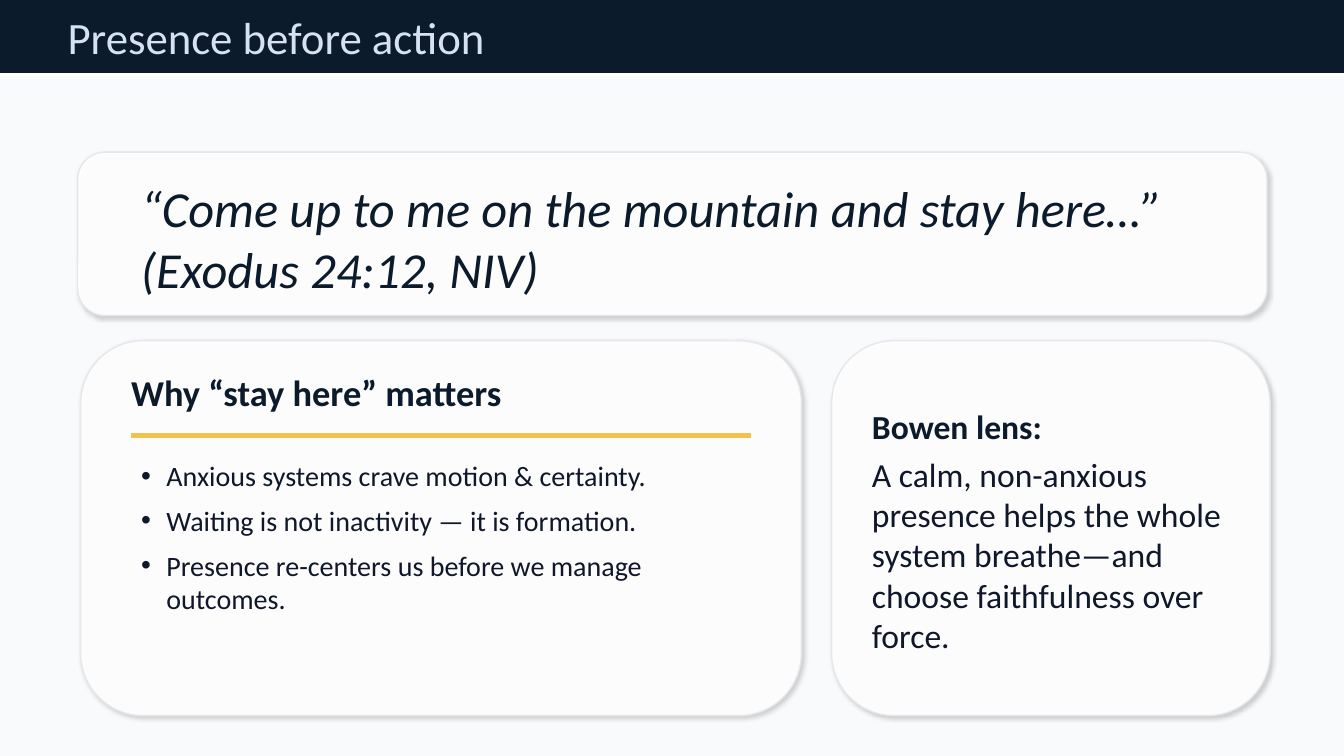
from collections import namedtuple

import lxml.etree
import pptx
import pptx.dml.color
import pptx.enum.shapes
import pptx.enum.text
import pptx.oxml.ns
import pptx.util

CELL = pptx.util.Inches(0.1)
COLUMNS, ROWS = 133.33, 75
COLORS = {
    "navy": "0B1B2B",
    "sky": "D7E2F0",
    "paper": "F8FAFC",
    "card": "FFFFFF",
    "edge": "E5E7EB",
    "gold": "F2C14E",
    "ink": "0F172A",
    "shadow": "000000",
}
SHAPES = pptx.enum.shapes.MSO_SHAPE
ANCHORS = pptx.enum.text.MSO_ANCHOR
Box = namedtuple("Box", "left top width height")


def color(name):
    return pptx.dml.color.RGBColor.from_string(COLORS[name])


def cells(*counts):
    return [round(count * CELL) for count in counts]


def inside(box, left, top, width, height):
    return Box(box.left + left, box.top + top, width, height)


def add_node(parent, tag, **attributes):
    values = {name: str(value) for name, value in attributes.items()}
    return lxml.etree.SubElement(parent, pptx.oxml.ns.qn(tag), values)


def add_panel(page, box, kind, fill, line):
    panel = page.shapes.add_shape(kind, *cells(*box))
    panel.shadow.inherit = False
    panel.fill.solid()
    panel.fill.fore_color.rgb = color(fill)
    panel.line.color.rgb = color(line)
    panel.line.width = pptx.util.Pt(1)
    return panel


def add_card(page, box):
    card = add_panel(page, box, SHAPES.ROUNDED_RECTANGLE, "card", "edge")
    properties = card._element.spPr
    fill = properties.find(pptx.oxml.ns.qn("a:solidFill"))
    add_node(fill[0], "a:alpha", val=94000)
    effects = properties.find(pptx.oxml.ns.qn("a:effectLst"))
    shadow = add_node(effects, "a:outerShdw", blurRad=pptx.util.Pt(3),
                      dist=pptx.util.Pt(2), dir=45 * 60000,
                      algn="ctr", rotWithShape=0)
    tint = add_node(shadow, "a:srgbClr", val=COLORS["shadow"])
    add_node(tint, "a:alpha", val=18000)


def write(page, box, lines, size, ink, holder=None, anchor=ANCHORS.TOP,
          bold=False, italic=False, bullet=None, after=0):
    if holder is None:
        holder = page.shapes.add_textbox(*cells(*box))
    else:
        holder.left, holder.top, holder.width, holder.height = cells(*box)
        page.shapes._spTree.append(holder._element)
    frame = holder.text_frame
    frame.word_wrap = True
    frame.auto_size = pptx.enum.text.MSO_AUTO_SIZE.NONE
    frame.vertical_anchor = anchor
    frame.text = "\n".join(lines)
    for para in frame.paragraphs:
        properties = para._p.get_or_add_pPr()
        indent = cells(2.5)[0] if bullet else 0
        properties.set("marL", str(indent))
        properties.set("indent", str(-indent))
        if bullet:
            add_node(properties, "a:buChar", char=bullet)
        else:
            add_node(properties, "a:buNone")
        para.alignment = pptx.enum.text.PP_ALIGN.LEFT
        para.space_before = pptx.util.Pt(0)
        para.space_after = pptx.util.Pt(after)
        for span in para.runs:
            span.font.name = "Calibri"
            span.font.size = pptx.util.Pt(size)
            span.font.color.rgb = color(ink)
            span.font.bold = bold
            span.font.italic = italic


def add_header(page, box, title):
    add_panel(page, box, SHAPES.RECTANGLE, "navy", "navy")
    write(page, inside(box, 5.7, 2.8, 122, 2.2), [title], 32, "sky",
          holder=page.shapes.title, anchor=ANCHORS.MIDDLE)


def add_quote(page, box, quote):
    add_card(page, box)
    write(page, inside(box, 5.3, 2, 108, 11), [quote], 36, "navy", italic=True)


def add_reasons(page, box, heading, reasons):
    add_card(page, box)
    write(page, inside(box, 4, 2.6, 61.5, 5), [heading], 26, "navy",
          holder=page.placeholders[1], anchor=ANCHORS.MIDDLE, bold=True)
    rule = inside(box, 5, 9.4, 61.5, 0)
    line = page.shapes.add_connector(
        pptx.enum.shapes.MSO_CONNECTOR.STRAIGHT,
        *cells(rule.left, rule.top, rule.left + rule.width, rule.top))
    line.line.color.rgb = color("gold")
    line.line.width = pptx.util.Pt(3)
    add_node(line._element.spPr, "a:effectLst")
    write(page, inside(box, 5, 11.2, 59.5, 19), reasons, 20, "ink",
          holder=page.placeholders[2], bullet="•", after=8)


def add_lens(page, box, heading, lens):
    add_card(page, box)
    write(page, inside(box, 3, 6.7, 38, 3.5), [heading], 24, "navy",
          holder=page.placeholders[3], anchor=ANCHORS.MIDDLE, bold=True)
    write(page, inside(box, 3, 10.7, 38, 24), [lens], 24, "ink",
          holder=page.placeholders[4])


def main():
    deck = pptx.Presentation()
    deck.slide_width, deck.slide_height = cells(COLUMNS, ROWS)
    page = deck.slides.add_slide(deck.slide_layouts.get_by_name("Comparison"))
    add_header(page, Box(0, -0.3, COLUMNS, 7.5), "Presence before action")
    add_panel(page, Box(0, 7.6, COLUMNS, 67.5), SHAPES.RECTANGLE, "paper", "paper")
    add_quote(page, Box(7.7, 15.1, 118, 16.2),
              "“Come up to me on the mountain and stay here…” (Exodus 24:12, NIV)")
    add_reasons(page, Box(8, 33.8, 71.5, 37.2), "Why “stay here” matters", [
        "Anxious systems crave motion & certainty.",
        "Waiting is not inactivity — it is formation.",
        "Presence re-centers us before we manage outcomes.",
    ])
    add_lens(page, Box(82.5, 33.8, 43.5, 37.2), "Bowen lens:",
             "A calm, non-anxious presence helps the whole system "
             "breathe—and choose faithfulness over force.")
    deck.save("out.pptx")


if __name__ == "__main__":
    main()
